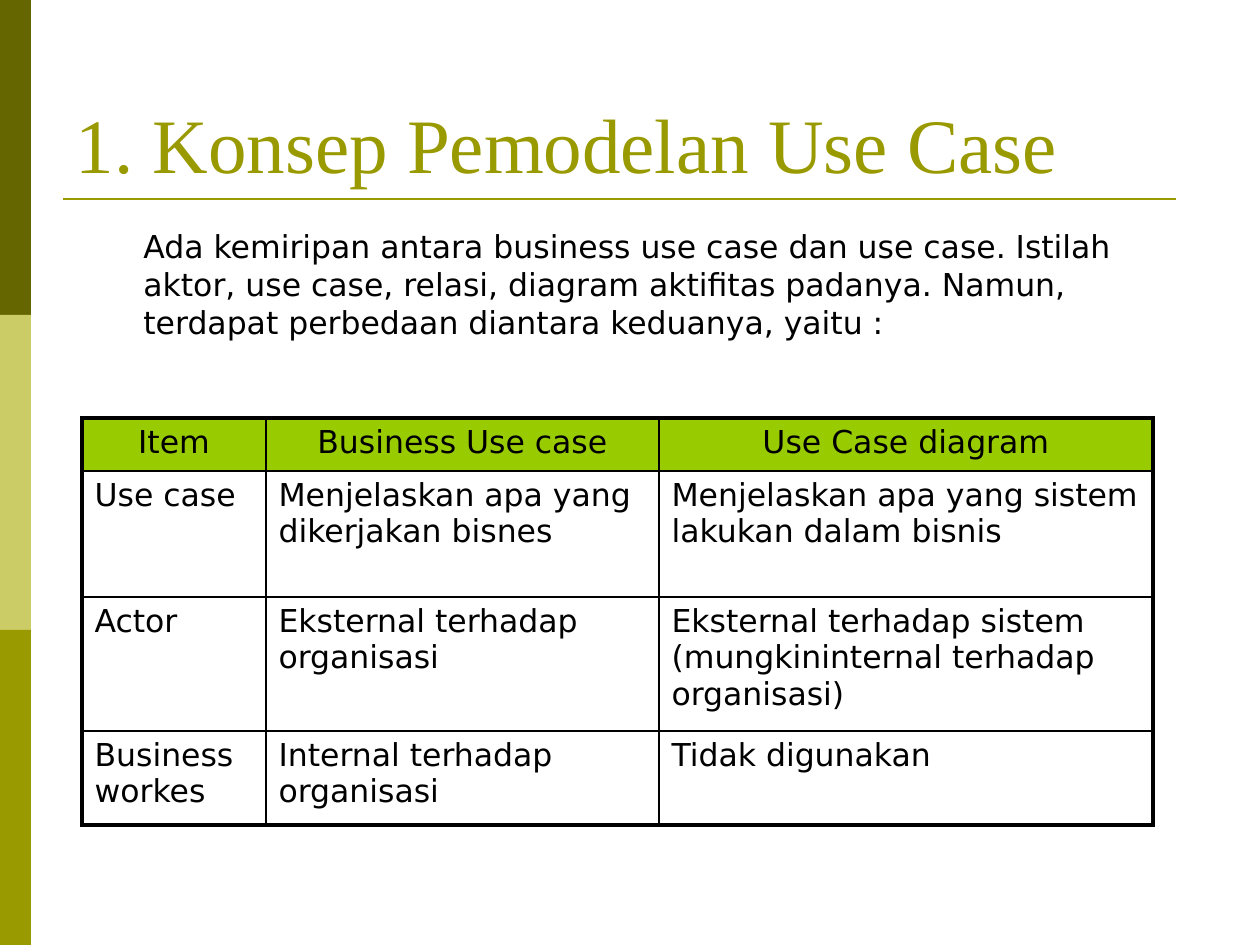
from lxml.etree import SubElement
from pptx import Presentation
from pptx.dml.color import RGBColor
from pptx.enum.shapes import MSO_CONNECTOR, MSO_SHAPE
from pptx.enum.text import MSO_ANCHOR, PP_ALIGN
from pptx.oxml.ns import qn
from pptx.util import Emu, Pt

TITLE = "1. Konsep Pemodelan Use Case"
INTRO = ("Ada kemiripan antara business use case dan use case. Istilah aktor, "
         "use case, relasi, diagram aktifitas padanya. Namun, terdapat "
         "perbedaan diantara keduanya, yaitu :")
COMPARISON = [
    ("Item", "Business Use case", "Use Case diagram"),
    ("Use case", "Menjelaskan apa yang dikerjakan bisnes",
     "Menjelaskan apa yang sistem lakukan dalam bisnis"),
    ("Actor", "Eksternal terhadap organisasi",
     "Eksternal terhadap sistem (mungkininternal terhadap organisasi)"),
    ("Business workes", "Internal terhadap organisasi", "Tidak digunakan"),
]
COLUMN_WIDTHS = (184, 393, 494)
ROW_HEIGHTS = (53, 126, 134, 94)
SIDEBAR = ("666600", "CCCC66", "999900")
OLIVE, BLACK, HEADER_GREEN = "999900", "000000", "99CC00"
INNER, OUTER = 1, 2.25

TITLE_FONT = {"name": "Times New Roman", "size": Pt(44), "color": OLIVE}
BODY_FONT = {"name": "DejaVu Sans", "size": Pt(18), "color": BLACK}


def px(length):
    return Emu(round(length * 914400 / 126))


def rgb(value):
    return RGBColor.from_string(value)


def place(part, left, top, width, height):
    box = {"left": left, "top": top, "width": width, "height": height}
    for side, length in box.items():
        setattr(part, side, px(length))


def write(frame, text, style, **paragraph_format):
    frame.word_wrap = True
    paragraph = frame.paragraphs[0]
    for key, value in paragraph_format.items():
        setattr(paragraph, key, value)
    run = paragraph.add_run()
    run.text = text
    for key, value in style.items():
        if key == "color":
            run.font.color.rgb = rgb(value)
        else:
            setattr(run.font, key, value)


def add_border(cell, side, points):
    line = SubElement(cell._tc.get_or_add_tcPr(), qn(f"a:ln{side}"),
                      w=str(Pt(points)))
    fill = SubElement(line, qn("a:solidFill"))
    SubElement(fill, qn("a:srgbClr"), val=BLACK)


def add_sidebar(slide):
    height = 315
    for index, color in enumerate(SIDEBAR):
        band = slide.shapes.add_shape(MSO_SHAPE.RECTANGLE, px(0),
                                      px(index * height), px(31), px(height))
        band.shadow.inherit = False
        band.fill.solid()
        band.fill.fore_color.rgb = rgb(color)
        band.line.fill.background()


def add_title(slide):
    rule = slide.shapes.add_connector(MSO_CONNECTOR.STRAIGHT, px(63), px(199),
                                      px(1176), px(199))
    rule.line.color.rgb = rgb(OLIVE)
    rule.line.width = Pt(1.5)
    SubElement(rule._element.spPr, qn("a:effectLst"))

    title = slide.shapes.title
    place(title, 63, 38, 1134, 157)
    title.text_frame.vertical_anchor = MSO_ANCHOR.BOTTOM
    write(title.text_frame, TITLE, TITLE_FONT, alignment=PP_ALIGN.LEFT)


def add_intro(slide):
    intro = slide.shapes.add_textbox(px(131), px(221), px(1065), px(150))
    write(intro.text_frame, INTRO, BODY_FONT, space_before=Pt(3.6))


def add_comparison(slide):
    table = slide.shapes.add_table(
        len(COMPARISON), len(COLUMN_WIDTHS), px(82), px(418),
        px(sum(COLUMN_WIDTHS)), px(sum(ROW_HEIGHTS))).table
    table.first_row = table.horz_banding = False
    for column, width in zip(table.columns, COLUMN_WIDTHS):
        column.width = px(width)
    for row, height in zip(table.rows, ROW_HEIGHTS):
        row.height = px(height)

    last_row, last_column = len(ROW_HEIGHTS) - 1, len(COLUMN_WIDTHS) - 1
    for r, entries in enumerate(COMPARISON):
        for c, entry in enumerate(entries):
            cell = table.cell(r, c)
            on_edge = {"L": c == 0, "R": c == last_column,
                       "T": r == 0, "B": r == last_row}
            for side, outer in on_edge.items():
                add_border(cell, side, OUTER if outer else INNER)
            if r == 0:
                cell.fill.solid()
                cell.fill.fore_color.rgb = rgb(HEADER_GREEN)
            else:
                cell.fill.background()
            write(cell.text_frame, entry, BODY_FONT, space_before=Pt(3.6),
                  alignment=PP_ALIGN.LEFT if r else PP_ALIGN.CENTER)


def main():
    deck = Presentation()
    deck.slide_width, deck.slide_height = px(1260), px(945)
    slide = deck.slides.add_slide(deck.slide_layouts[5])
    add_sidebar(slide)
    add_title(slide)
    add_intro(slide)
    add_comparison(slide)
    deck.save("out.pptx")


if __name__ == "__main__":
    main()
